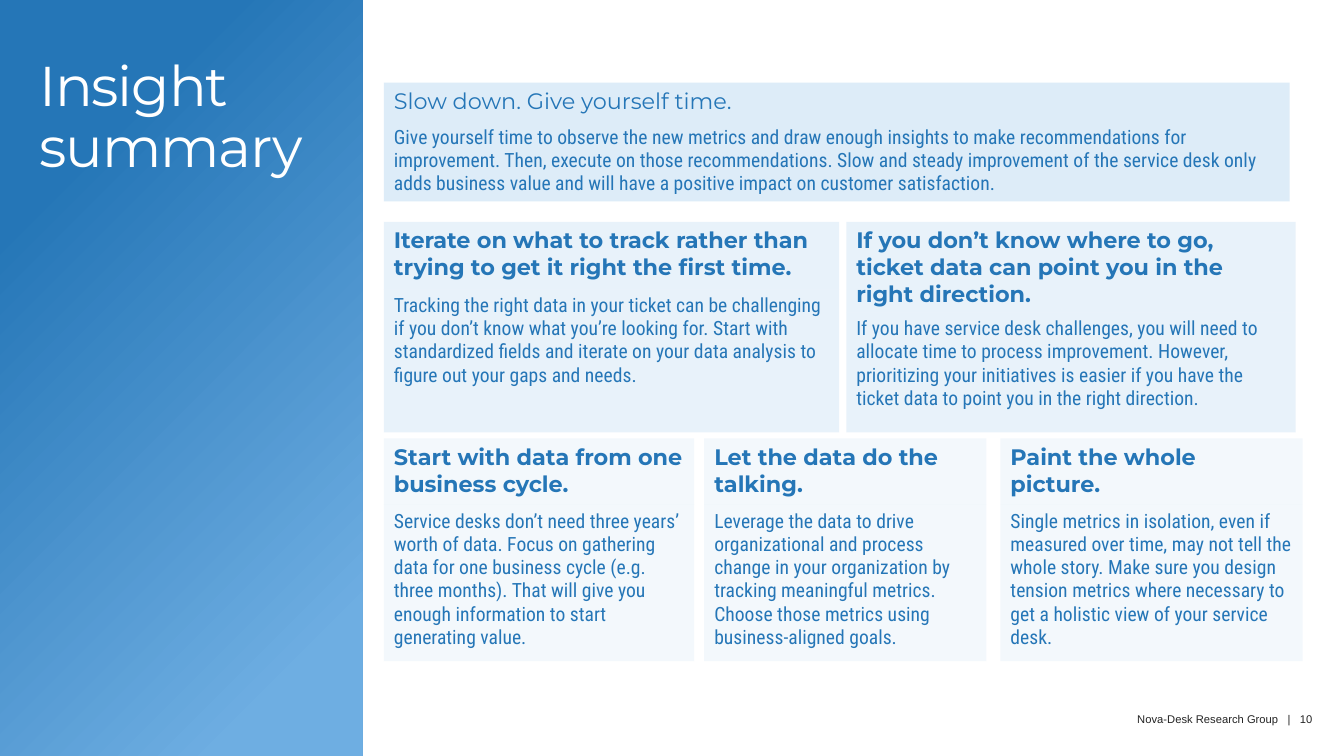
from lxml import etree
from pptx import Presentation
from pptx.dml.color import RGBColor
from pptx.enum.shapes import MSO_SHAPE as SHAPE
from pptx.enum.text import PP_ALIGN as ALIGN
from pptx.oxml.ns import qn
from pptx.util import Pt

PX = 9144  # EMU per px, 100 px to the inch
WIDTH, HEIGHT = 1334, 750

BLUE = RGBColor(0x25, 0x76, 0xB7)
SKY = RGBColor(0x6E, 0xAE, 0xE2)
PALE = RGBColor(0x9F, 0xC9, 0xEB)
PALEST = RGBColor(0xCF, 0xE4, 0xF5)
WHITE = RGBColor(0xFF, 0xFF, 0xFF)
CHARCOAL = RGBColor(0x24, 0x24, 0x24)

HEADING_FONT, BODY_FONT = "Montserrat", "Roboto Condensed"
PLAIN_TABLE = "{2D5ABB26-0587-4C30-8999-92F81FD0307C}"
TILE_OPACITY = 23

# left, top, width, row heights, colour, heading, body
INSIGHTS = [
    (381, 220, 452, (67, 142), PALE,
     "Iterate on what to track rather than trying to get it right the first time.",
     "Tracking the right data in your ticket can be challenging if you don’t know what "
     "you’re looking for. Start with standardized fields and iterate on your data "
     "analysis to figure out your gaps and needs."),
    (840, 220, 446, (90, 119), PALE,
     "If you don’t know where to go, ticket data can point you in the right direction.",
     "If you have service desk challenges, you will need to allocate time to process "
     "improvement. However, prioritizing your initiatives is easier if you have the "
     "ticket data to point you in the right direction."),
    (381, 435, 308, (66, 155), PALEST,
     "Start with data from one business cycle.",
     "Service desks don’t need three years’ worth of data. Focus on gathering data for "
     "one business cycle (e.g. three months). That will give you enough information to "
     "start generating value."),
    (699, 435, 280, (66, 155), PALEST,
     "Let the data do the talking.",
     "Leverage the data to drive organizational and process change in your organization "
     "by tracking meaningful metrics. Choose those metrics using business-aligned goals."),
    (993, 435, 300, (66, 155), PALEST,
     "Paint the whole\vpicture.",
     "Single metrics in isolation, even if measured over time, may not tell the whole "
     "story. Make sure you design tension metrics where necessary to get a holistic view "
     "of your service desk."),
]


def write(paragraph, text, font_name, size, color, bold=False):
    paragraph.text = text
    font = paragraph.font
    font.name, font.size, font.bold = font_name, Pt(size), bold
    font.color.rgb = color


def add_tile(left, top, width, row_heights, color):
    """Add a one-column table with a see-through fill and return its cells."""
    frame = slide.shapes.add_table(len(row_heights), 1, left * PX, top * PX,
                                   width * PX, sum(row_heights) * PX)
    table = frame.table
    table.first_row = table.horz_banding = False
    frame._element.find(".//" + qn("a:tableStyleId")).text = PLAIN_TABLE
    for row, height in zip(table.rows, row_heights):
        row.height = height * PX
    cells = list(table.iter_cells())
    for cell in cells:
        cell.fill.solid()
        cell.fill.fore_color.rgb = color
        rgb = cell._tc.tcPr.find(".//" + qn("a:srgbClr"))
        etree.SubElement(rgb, qn("a:alpha"), val=str(TILE_OPACITY * 1000))
    return cells


deck = Presentation()
deck.slide_width, deck.slide_height = WIDTH * PX, HEIGHT * PX
slide = deck.slides.add_slide(deck.slide_layouts[6])

# Side panel
panel = slide.shapes.add_shape(SHAPE.RECTANGLE, 0, 0, 360 * PX, HEIGHT * PX)
panel.shadow.inherit = False
panel.line.fill.background()
panel.fill.gradient()
panel.fill.gradient_angle = 315
for stop, position, color in zip(panel.fill.gradient_stops, (0.21, 0.87), (BLUE, SKY)):
    stop.position = position
    stop.color.rgb = color

# Title and footer
for left, top, width, height, text, font_name, size, color, align, tracking in [
    (39, 58, 289, 127, "Insight summary", HEADING_FONT, 40, WHITE, ALIGN.LEFT, -80),
    (963, 707, 340, 13, "Nova-Desk Research Group   |   10", "Arial", 8, CHARCOAL,
     ALIGN.RIGHT, 0),
]:
    frame = slide.shapes.add_textbox(left * PX, top * PX, width * PX, height * PX).text_frame
    frame.word_wrap = True
    frame.margin_left = frame.margin_top = frame.margin_right = frame.margin_bottom = 0
    line = frame.paragraphs[0]
    write(line, text, font_name, size, color)
    line.alignment = align
    line.line_spacing = 0.9 if size == 40 else 1.0
    line.runs[0].font._element.set("spc", str(tracking))

# Lead insight, heading and body in one cell
lead = add_tile(381, 82, 899, [117], SKY)[0].text_frame
write(lead.paragraphs[0], "Slow down. Give yourself time.", HEADING_FONT, 16, BLUE)
lead_body = lead.add_paragraph()
write(lead_body,
      "Give yourself time to observe the new metrics and draw enough insights to make "
      "recommendations for improvement. Then, execute on those recommendations. Slow and "
      "steady improvement of the service desk only adds business value and will have a "
      "positive impact on customer satisfaction.", BODY_FONT, 14, BLUE)
lead_body.space_before = Pt(8)

# Supporting insights, heading above body
for left, top, width, row_heights, color, heading, body in INSIGHTS:
    heading_cell, body_cell = add_tile(left, top, width, row_heights, color)
    write(heading_cell.text_frame.paragraphs[0], heading, HEADING_FONT, 16, BLUE, bold=True)
    write(body_cell.text_frame.paragraphs[0], body, BODY_FONT, 14, BLUE)

deck.save("out.pptx")
